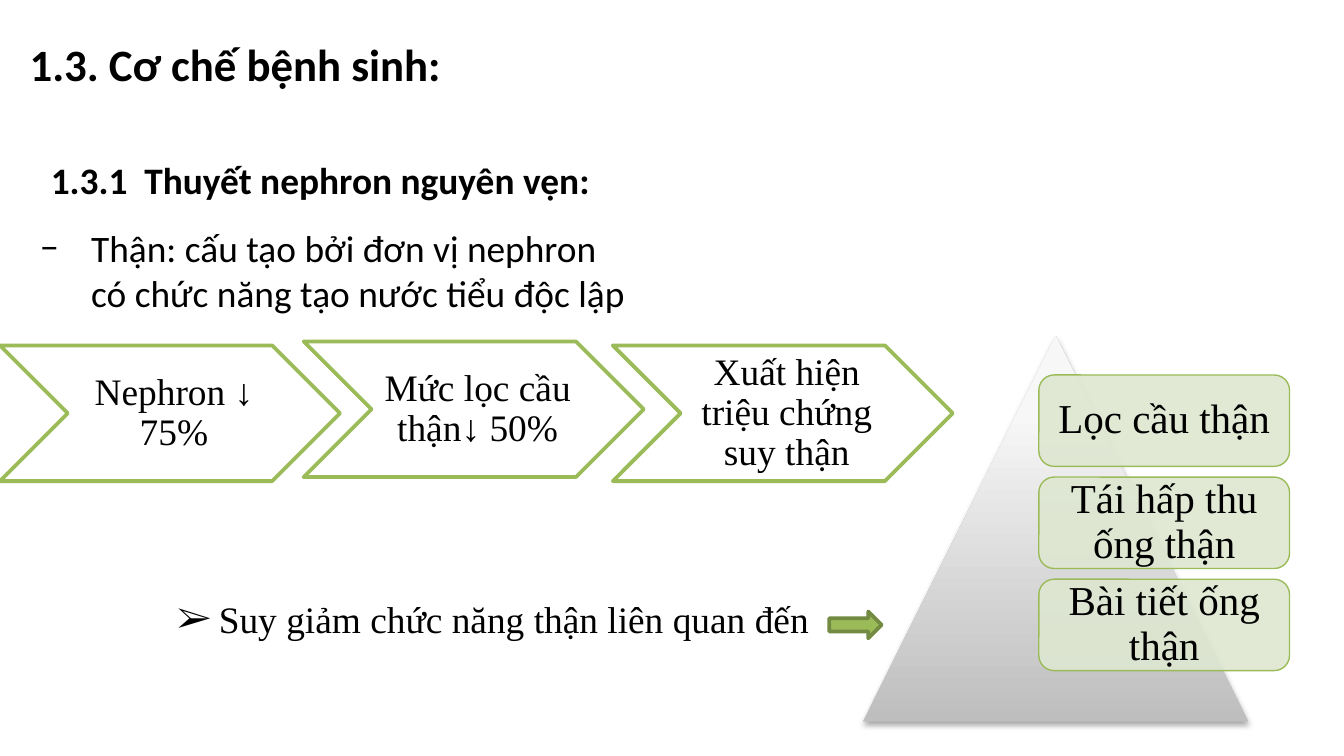
from dataclasses import dataclass
from lxml.etree import SubElement
from pptx import Presentation
from pptx.dml.color import RGBColor
from pptx.enum.shapes import MSO_SHAPE as Shape
from pptx.enum.text import MSO_ANCHOR as Anchor, PP_ALIGN as Align
from pptx.oxml import parse_xml
from pptx.oxml.ns import nsdecls, qn
from pptx.util import Inches, Pt


@dataclass(frozen=True)
class Theme:
    """Colours, fonts and type sizes."""
    ink: str = "000000"
    white: str = "FFFFFF"
    green: str = "9BBB59"
    dark: str = "738A42"
    pale: str = "DEE7D1"
    sans: str = "Calibri"
    serif: str = "Times New Roman"
    head: int = 24
    large: int = 22
    body: int = 20


T = Theme()


def place(item, box):
    """Move an item to a box in inches."""
    item.left, item.top, item.width, item.height = map(Inches, box)


def bullet(para, mark, indent, face):
    """Give a paragraph a hanging bullet."""
    props = para._p.get_or_add_pPr()
    props.set("marL", str(Inches(indent)))
    props.set("indent", str(-Inches(indent)))
    SubElement(props, qn("a:buFont")).set("typeface", face)
    SubElement(props, qn("a:buChar")).set("char", mark)


def write(item, text, size, face, bold=False, align=Align.LEFT,
          anchor=Anchor.TOP, mark=None, indent=0):
    """Set one paragraph of text in an item."""
    frame = item.text_frame
    frame.word_wrap = True
    frame.vertical_anchor = anchor
    frame.text = text
    para = frame.paragraphs[0]
    para.alignment = align
    if mark:
        bullet(para, mark, indent, face)
    font = para.font
    font.size, font.name, font.bold = Pt(size), face, bold
    font.color.rgb = RGBColor.from_string(T.ink)
    return para


def label(item, text, size, pads):
    """Centre a tight label inside a shape."""
    para = write(item, text, size, T.serif, align=Align.CENTER,
                 anchor=Anchor.MIDDLE)
    para.line_spacing = 0.9
    frame = item.text_frame
    (frame.margin_left, frame.margin_top,
     frame.margin_right, frame.margin_bottom) = map(Inches, pads)


def draw(slide, kind, box, fill, line, width):
    """Add a flat preset shape."""
    item = slide.shapes.add_shape(kind, *map(Inches, box))
    item.shadow.inherit = False
    item.fill.solid()
    item.fill.fore_color.rgb = RGBColor.from_string(fill)
    item.line.color.rgb = RGBColor.from_string(line)
    item.line.width = Pt(width)
    return item


def heading(slide, box):
    """Fill the title and the two texts below it."""
    left, top, wide, high = box
    title = slide.shapes.title
    place(title, (left, top, wide, high))
    write(title, "1.3. Cơ chế bệnh sinh:", T.head, T.sans, True,
          anchor=Anchor.MIDDLE)
    sub = slide.shapes.add_textbox(0, 0, 0, 0)
    place(sub, (left + 0.16, top + 1.08, 4.56, 0.47))
    write(sub, "1.3.1  Thuyết nephron nguyên vẹn:", T.body, T.sans, True,
          anchor=Anchor.BOTTOM)
    point = slide.shapes.add_textbox(0, 0, 0, 0)
    place(point, (left + 0.08, top + 1.63, 4.57, 0.87))
    write(point, "Thận: cấu tạo bởi đơn vị nephron có chức năng tạo nước tiểu "
          "độc lập", T.body, T.sans, mark="−", indent=0.38)


def flow(slide, box):
    """Draw the row of chevrons, the middle one slightly raised."""
    left, top, wide, high = box
    steps = [(0, 0, "Nephron ↓ 75%"),
             (2.26, -0.03, "Mức lọc cầu thận↓ 50%"),
             (4.56, 0, "Xuất hiện triệu chứng suy thận")]
    for x, y, text in steps:
        spot = (left + x, top + y, wide - steps[-1][0], high)
        item = draw(slide, Shape.CHEVRON, spot, T.white, T.green, 2)
        label(item, text, T.body, (0.09, 0.03, 0.03, 0.03))


def shade(item):
    """Give a shape a grey rising gradient and a soft shadow."""
    item.line.fill.background()
    item.fill.background()
    props = item._element.spPr
    stops = "".join(
        f'<a:gs pos="{at * 1000}"><a:srgbClr val="{tone}"/></a:gs>'
        for at, tone in [(0, "BEBEBE"), (80, "F7F7F7"), (100, "F8F8F8")])
    grad = parse_xml(
        f'<a:gradFill {nsdecls("a")} rotWithShape="1"><a:gsLst>{stops}'
        '</a:gsLst><a:lin ang="16200000" scaled="0"/></a:gradFill>')
    props.replace(props.find(qn("a:noFill")), grad)
    glow = parse_xml(
        f'<a:effectLst {nsdecls("a")}><a:outerShdw blurRad="{Pt(3.1)}" '
        f'dist="{Pt(1.8)}" dir="5400000" rotWithShape="0">'
        f'<a:srgbClr val="{T.ink}"><a:alpha val="35000"/></a:srgbClr>'
        '</a:outerShdw></a:effectLst>')
    props.replace(props.find(qn("a:effectLst")), glow)


def pyramid(slide, box):
    """Draw the triangle and its stack of labels."""
    left, top, wide, high = box
    shade(draw(slide, Shape.ISOSCELES_TRIANGLE, box, T.white, T.white, 1))
    texts = ["Lọc cầu thận", "Tái hấp thu ống thận", "Bài tiết ống thận"]
    for row, text in enumerate(texts):
        spot = (left + 1.31, top + 0.29 + row * 0.76, wide * 0.65, 0.68)
        item = draw(slide, Shape.ROUNDED_RECTANGLE, spot, T.pale, T.green,
                    0.75)
        tint = item._element.spPr.find(qn("a:solidFill"))[0]
        SubElement(tint, qn("a:alpha")).set("val", "90000")
        label(item, text, T.large, (0.09,) * 4)


def result(slide, box):
    """Write the closing point and its arrow."""
    left, top, wide, high = box
    note = slide.shapes.add_textbox(0, 0, 0, 0)
    place(note, (left, top, 5.04, high))
    write(note, "Suy giảm chức năng thận liên quan đến", T.body, T.serif,
          mark="➢", indent=0.31)
    spot = (left + wide - 0.39, top + 0.16, 0.39, 0.2)
    draw(slide, Shape.RIGHT_ARROW, spot, T.green, T.dark, 2)


def main():
    """Build and save the slide."""
    deck = Presentation()
    deck.slide_width = Inches(10)
    deck.slide_height = deck.slide_width * 9 // 16
    slide = deck.slides.add_slide(deck.slide_layouts[5])
    heading(slide, (0.12, 0, 9, 0.94))
    flow(slide, (0, 2.57, 7.09, 1.01))
    pyramid(slide, (6.42, 2.5, 2.87, 2.87))
    result(slide, (1.22, 4.39, 5.34, 0.44))
    deck.save("out.pptx")


if __name__ == "__main__":
    main()
